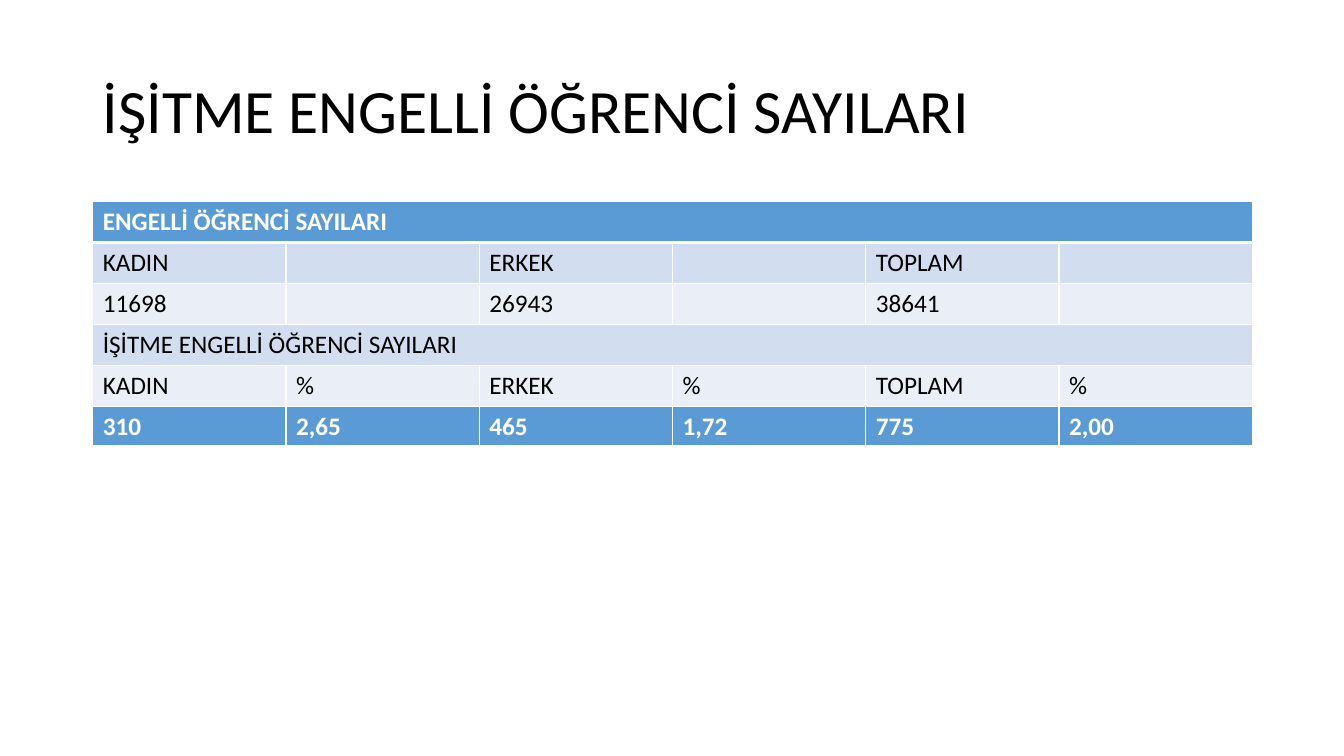
from dataclasses import dataclass

from lxml import etree
from pptx import Presentation
from pptx.dml.color import RGBColor
from pptx.enum.text import MSO_ANCHOR, PP_ALIGN
from pptx.oxml.ns import qn
from pptx.util import Inches, Pt

MIDDLE = MSO_ANCHOR.MIDDLE
LEFT = PP_ALIGN.LEFT
TITLE_ONLY = 5


@dataclass(frozen=True)
class Theme:
    font: str = "Calibri"
    title_size: int = 44
    table_size: int = 18
    text: str = "000000"
    white: str = "FFFFFF"
    header: str = "5B9BD5"
    bands: tuple = ("D2DEEF", "EAEFF7")
    thin: int = 1
    thick: int = 3


THEME = Theme()
COLUMNS = 6
ROW_HEIGHT = 0.406

STUDENT_ROWS = [
    ["ENGELLİ ÖĞRENCİ SAYILARI"],
    ["KADIN", "", "ERKEK", "", "TOPLAM", ""],
    ["11698", "", "26943", "", "38641", ""],
    ["İŞİTME ENGELLİ ÖĞRENCİ SAYILARI"],
    ["KADIN", "%", "ERKEK", "%", "TOPLAM", "%"],
]
HEARING_ROWS = [["310", "2,65", "465", "1,72", "775", "2,00"]]


def format_font(font, size, color, bold=False):
    font.name = THEME.font
    font.size = Pt(size)
    font.bold = bold
    font.color.rgb = RGBColor.from_string(color)


def add_title(slide, text, left, top, width, height):
    sp = slide.shapes.title
    sp.left, sp.top = Inches(left), Inches(top)
    sp.width, sp.height = Inches(width), Inches(height)
    tf = sp.text_frame
    tf.text = text
    tf.word_wrap = True
    tf.vertical_anchor = MIDDLE
    p = tf.paragraphs[0]
    p.alignment = LEFT
    p.line_spacing = 0.9
    format_font(p.runs[0].font, THEME.title_size, THEME.text)


def set_borders(cell, top, bottom):
    """Draw white cell edges; top and bottom are widths in points."""
    tc_pr = cell._tc.get_or_add_tcPr()
    widths = {"lnL": THEME.thin, "lnR": THEME.thin, "lnT": top, "lnB": bottom}
    for tag, width in widths.items():
        ln = etree.SubElement(tc_pr, qn(f"a:{tag}"), w=str(Pt(width)))
        fill = etree.SubElement(ln, qn("a:solidFill"))
        etree.SubElement(fill, qn("a:srgbClr"), val=THEME.white)


def add_banded_table(slide, rows, left, top, width):
    """Add a table with a header first row; a one-item row spans all columns."""
    frame = slide.shapes.add_table(
        len(rows), COLUMNS, Inches(left), Inches(top),
        Inches(width), Inches(ROW_HEIGHT * len(rows)))
    table = frame.table
    for i, values in enumerate(rows):
        is_header = i == 0
        fill = THEME.header if is_header else THEME.bands[(i - 1) % 2]
        color = THEME.white if is_header else THEME.text
        for cell in table.rows[i].cells:
            set_borders(cell, THEME.thick if i == 1 else THEME.thin,
                        THEME.thick if is_header else THEME.thin)
            cell.fill.solid()
            cell.fill.fore_color.rgb = RGBColor.from_string(fill)
        if len(values) == 1:
            table.cell(i, 0).merge(table.cell(i, COLUMNS - 1))
        for j, value in enumerate(values):
            p = table.cell(i, j).text_frame.paragraphs[0]
            p.text = value
            for r in p.runs:
                format_font(r.font, THEME.table_size, color, is_header)


def main():
    prs = Presentation()
    prs.slide_width, prs.slide_height = Inches(13.33), Inches(7.5)
    slide = prs.slides.add_slide(prs.slide_layouts[TITLE_ONLY])
    left, width, top = 0.92, 11.5, 2
    add_title(slide, "İŞİTME ENGELLİ ÖĞRENCİ SAYILARI", left, 0.4, width, 1.45)
    add_banded_table(slide, STUDENT_ROWS, left, top, width)
    hearing_top = top + ROW_HEIGHT * len(STUDENT_ROWS)
    add_banded_table(slide, HEARING_ROWS, left, hearing_top, width)
    prs.save("out.pptx")


if __name__ == "__main__":
    main()
